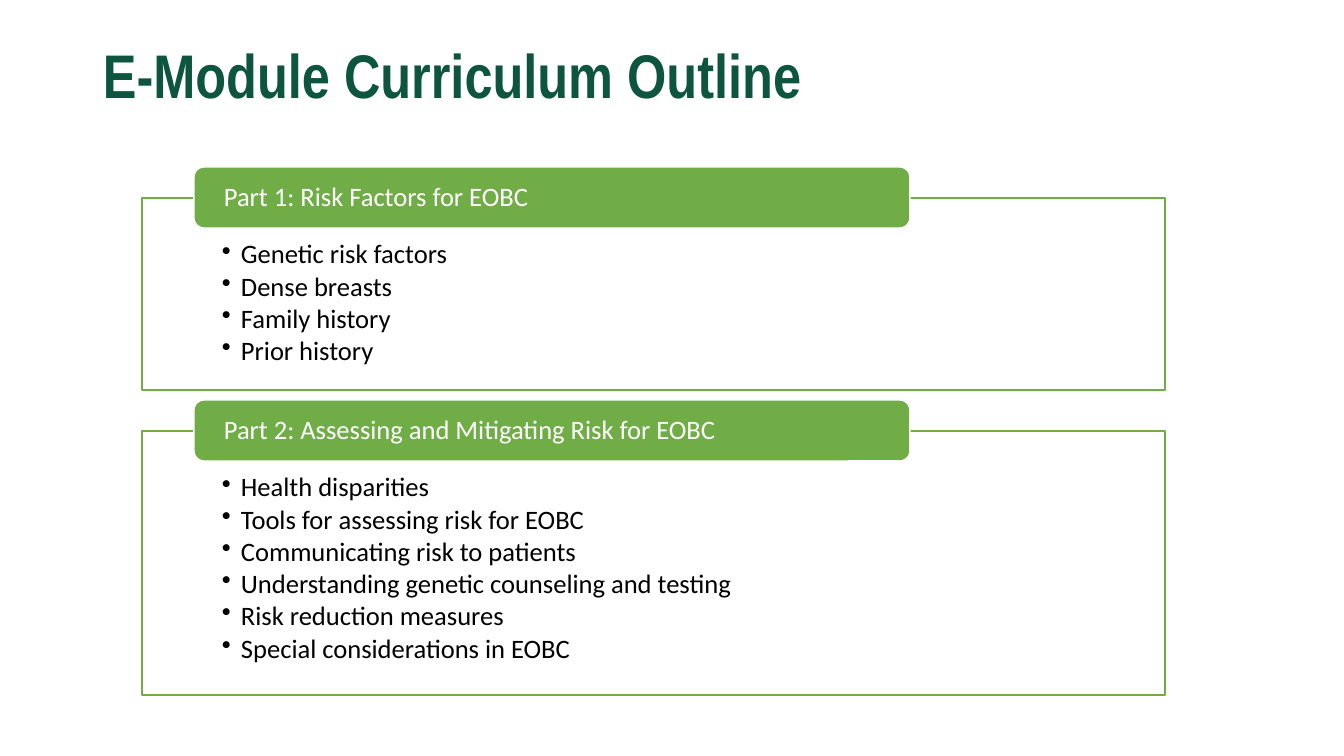
"""Build the curriculum outline slide with two titled panels."""
from dataclasses import dataclass

from lxml.etree import SubElement
from pptx import Presentation
from pptx.dml.color import RGBColor
from pptx.enum.shapes import MSO_SHAPE
from pptx.enum.text import MSO_ANCHOR, PP_ALIGN
from pptx.oxml.ns import qn
from pptx.util import Pt

TITLE = "E-Module Curriculum Outline"
PARTS = [
    ("Part 1: Risk Factors for EOBC", [
        "Genetic risk factors",
        "Dense breasts",
        "Family history",
        "Prior history",
    ]),
    ("Part 2: Assessing and Mitigating Risk for EOBC", [
        "Health disparities",
        "Tools for assessing risk for EOBC",
        "Communicating risk to patients",
        "Understanding genetic counseling and testing",
        "Risk reduction measures",
        "Special considerations in EOBC",
    ]),
]


@dataclass(frozen=True)
class Theme:
    """Colours, fonts and type sizes."""
    dark: str = "0D553F"
    green: str = "70AD47"
    white: str = "FFFFFF"
    black: str = "000000"
    head: str = "Arial Narrow"
    body: str = "Calibri"
    big: int = 44
    small: int = 19


THEME = Theme()
WIDE, HIGH = 1344, 756
LEFT, TOP, WIDTH = 142, 198, 1023
ROW, PAD, GAP = 36, 48, 41
TAB_X, TAB_W, TAB_H, RISE = 194, 716, 61, 31
INDENT = 19


def px(num):
    """Turn slide pixels into EMU."""
    return round(num * 914400 / 100.8)


def rgb(code):
    """Turn a hex code into a colour."""
    return RGBColor.from_string(code)


def write(shape, lines, *, size=THEME.small, font=THEME.body, color=THEME.black,
          bold=False, inset=(0, 0, 0, 0), anchor=MSO_ANCHOR.TOP, after=0, bullet=False):
    """Fill a shape with formatted paragraphs."""
    frame = shape.text_frame
    frame.word_wrap = True
    frame.vertical_anchor = anchor
    (frame.margin_left, frame.margin_top,
     frame.margin_right, frame.margin_bottom) = map(px, inset)
    for num, line in enumerate(lines):
        para = frame.add_paragraph() if num else frame.paragraphs[0]
        para.text = line
        para.alignment = PP_ALIGN.LEFT
        para.line_spacing = 0.9
        para.space_after = Pt(after)
        if bullet:
            props = para._p.get_or_add_pPr()
            props.set("marL", str(px(INDENT)))
            props.set("indent", str(-px(INDENT)))
            SubElement(props, qn("a:buChar"), char="•")
        face = para.runs[0].font
        face.name, face.size, face.bold = font, Pt(size), bold
        face.color.rgb = rgb(color)


def panel(slide, kind, box, fill, line):
    """Add a filled and outlined shape."""
    shape = slide.shapes.add_shape(kind, *map(px, box))
    shape.shadow.inherit = False
    shape.fill.solid()
    shape.fill.fore_color.rgb = rgb(fill)
    shape.line.color.rgb = rgb(line)
    shape.line.width = Pt(1)
    return shape


def main():
    """Place the title and panels, then save."""
    deck = Presentation()
    deck.slide_width, deck.slide_height = px(WIDE), px(HIGH)
    slide = deck.slides.add_slide(deck.slide_layouts[6])

    top = TOP
    for label, items in PARTS:
        height = PAD + ROW * len(items)
        body = panel(slide, MSO_SHAPE.RECTANGLE, (LEFT, top, WIDTH, height),
                     THEME.white, THEME.green)
        write(body, items, inset=(80, 43, 80, 15), after=2.5, bullet=True)
        tab = panel(slide, MSO_SHAPE.ROUNDED_RECTANGLE,
                    (TAB_X, top - RISE, TAB_W, TAB_H), THEME.green, THEME.white)
        write(tab, [label], color=THEME.white, inset=(27, 0, 27, 0),
              anchor=MSO_ANCHOR.MIDDLE)
        top += height + GAP

    title = slide.shapes.add_textbox(*map(px, (93, 40, 1159, 146)))
    write(title, [TITLE], size=THEME.big, font=THEME.head, color=THEME.dark,
          bold=True, inset=(10, 5, 10, 5))
    deck.save("out.pptx")


if __name__ == "__main__":
    main()
